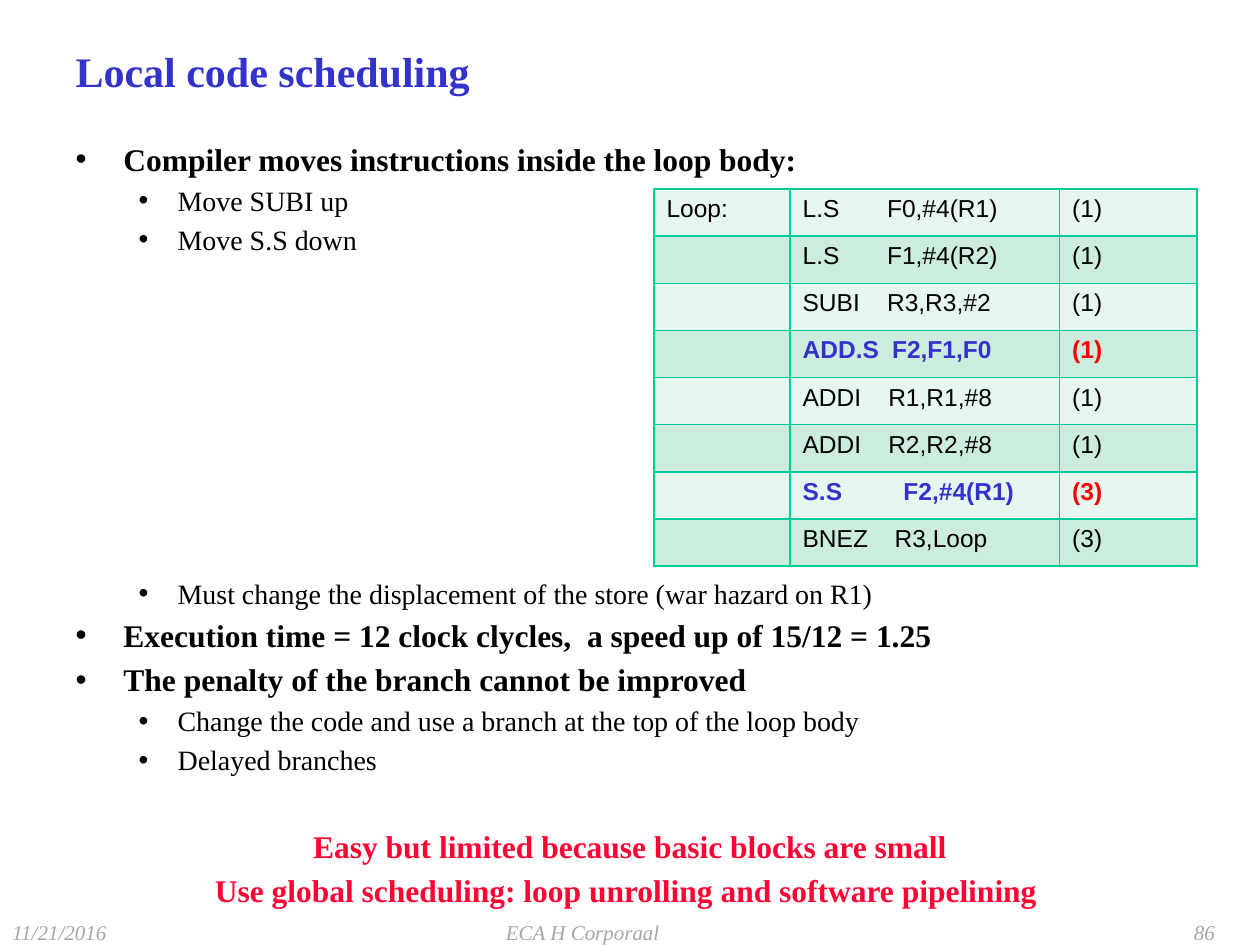
from lxml.etree import SubElement as Sub
from pptx import Presentation
from pptx.dml.color import RGBColor
from pptx.enum.text import MSO_ANCHOR as Anchor, MSO_AUTO_SIZE as Fit, PP_ALIGN as Align
from pptx.oxml.ns import qn
from pptx.util import Inches, Pt

SERIF, SANS = "Times New Roman", "Arial"
BLACK, BLUE, RED, PINK = "000000", "3333CC", "FF0000", "FF0333"
GREY, GREEN, BANDS = "A6A6A6", "00CC99", ("E7F6EF", "CCECDE")


def rgb(code):
    return RGBColor.from_string(code)


class Deck:
    """Holds the style and the current slide; places are percent of the slide."""

    def __init__(self):
        self.prs = Presentation()
        self.prs.slide_width, self.prs.slide_height = Inches(10), Inches(7.5)
        self.slide = self.prs.slides.add_slide(self.prs.slide_layouts[1])

    def area(self, x, y, w, h):
        wide, high = self.prs.slide_width, self.prs.slide_height
        return [int(n * side / 100) for n, side in zip((x, y, w, h), (wide, high) * 2)]

    def move(self, shape, place):
        shape.left, shape.top, shape.width, shape.height = self.area(*place)

    def run(self, para, text, size, color=BLACK, bold=False, slant=False, face=SERIF):
        run = para.add_run()
        run.text = text
        font = run.font
        font.name, font.size, font.bold, font.italic = face, Pt(size), bold, slant
        font.color.rgb = rgb(color)

    def title(self, text, place):
        shape = self.slide.shapes.title
        self.move(shape, place)
        frame = shape.text_frame
        frame.vertical_anchor, frame.auto_size = Anchor.MIDDLE, Fit.NONE
        para = frame.paragraphs[0]
        para.alignment = Align.LEFT
        self.run(para, text, 24, BLUE, True)

    def body(self, items, place):
        shape = self.slide.placeholders[1]
        self.move(shape, place)
        frame = shape.text_frame
        frame.auto_size = Fit.NONE
        for i, (kind, text, gap) in enumerate(items):
            para = frame.paragraphs[0] if i == 0 else frame.add_paragraph()
            sub, note = kind == "sub", kind == "note"
            size = 16 if sub else 18
            para.level = int(sub)
            para.space_before = Pt(gap or size / 5)
            para.alignment = Align.CENTER if note else Align.LEFT
            left, hang = (0.81, 0.31) if sub else (0.38, 0.38)
            props = para._p.get_or_add_pPr()
            props.set("marL", str(Inches(left)))
            props.set("indent", str(-Inches(hang)))
            if note:
                Sub(props, qn("a:buNone"))
            else:
                Sub(props, qn("a:buChar"), char="•")
            self.run(para, text, size, PINK if note else BLACK, not sub)

    def edge(self, cell):
        props = cell._tc.get_or_add_tcPr()
        for i, side in enumerate(("lnL", "lnR", "lnT", "lnB")):
            line = props.makeelement(qn("a:" + side), {"w": str(Pt(1))})
            Sub(Sub(line, qn("a:solidFill")), qn("a:srgbClr"), val=GREEN)
            props.insert(i, line)

    def table(self, rows, parts, place):
        spot = self.area(*place)
        grid = self.slide.shapes.add_table(len(rows), len(parts), *spot).table
        for col, part in zip(grid.columns, parts):
            col.width = int(spot[2] * part / sum(parts))
        for r, (label, code, cost, stop, hot) in enumerate(rows):
            tones = BLACK, BLUE if hot else BLACK, RED if hot else BLACK
            for c, text in enumerate((label, code, cost)):
                cell = grid.cell(r, c)
                cell.fill.solid()
                cell.fill.fore_color.rgb = rgb(BANDS[r % 2])
                self.edge(cell)
                para = cell.text_frame.paragraphs[0]
                if "\t" in text:  # operands line up on a tab stop
                    tabs = Sub(para._p.get_or_add_pPr(), qn("a:tabLst"))
                    Sub(tabs, qn("a:tab"), pos=str(Inches(stop)), algn="l")
                if text:
                    self.run(para, text, 14, tones[c], hot, face=SANS)
                else:  # an empty cell must not stretch its row
                    Sub(para._p, qn("a:endParaRPr"), sz="1400")

    def foot(self, text, x, w, align):
        frame = self.slide.shapes.add_textbox(*self.area(x, 97.33, w, 2.67)).text_frame
        frame.word_wrap, frame.vertical_anchor = True, Anchor.MIDDLE
        frame.margin_top = frame.margin_bottom = 0
        para = frame.paragraphs[0]
        para.alignment = align
        self.run(para, text, 12, GREY, slant=True)


def main():
    deck = Deck()

    # Title and list; a gap in points leaves room for the table or the close
    deck.title("Local code scheduling", (5, 0.93, 90, 13.2))
    deck.body([
        ("main", "Compiler moves instructions inside the loop body:", None),
        ("sub", "Move SUBI up", None),
        ("sub", "Move S.S down", None),
        ("sub", "Must change the displacement of the store (war hazard on R1)", 183),
        ("main", "Execution time = 12 clock clycles,  a speed up of 15/12 = 1.25", None),
        ("main", "The penalty of the branch cannot be improved", None),
        ("sub", "Change the code and use a branch at the top of the loop body", None),
        ("sub", "Delayed branches", None),
        ("note", "Easy but limited because basic blocks are small", 29),
        ("note", "Use global scheduling: loop unrolling and software pipelining ", None),
    ], (5, 14.13, 90, 78.53))

    # Code listing: label, code, cycles, tab stop, highlighted
    deck.table([
        ("Loop:", "L.S\tF0,#4(R1)", "(1)", 0.67, False),
        ("", "L.S\tF1,#4(R2)", "(1)", 0.67, False),
        ("", "SUBI\tR3,R3,#2", "(1)", 0.67, False),
        ("", "ADD.S\tF2,F1,F0", "(1)", 0.71, True),
        ("", "ADDI\tR1,R1,#8", "(1)", 0.68, False),
        ("", "ADDI\tR2,R2,#8", "(1)", 0.68, False),
        ("", "S.S\tF2,#4(R1)", "(3)", 0.8, True),
        ("", "BNEZ\tR3,Loop", "(3)", 0.73, False),
    ], (1.08, 2.14, 1.09), (51.9, 20, 43.1, 39.9))

    # Footer
    deck.foot("11/21/2016", 0, 23.3, Align.LEFT)
    deck.foot("86", 74.1, 23.3, Align.RIGHT)
    deck.foot("ECA H Corporaal", 30.4, 31.7, Align.CENTER)

    deck.prs.save("out.pptx")


if __name__ == "__main__":
    main()
